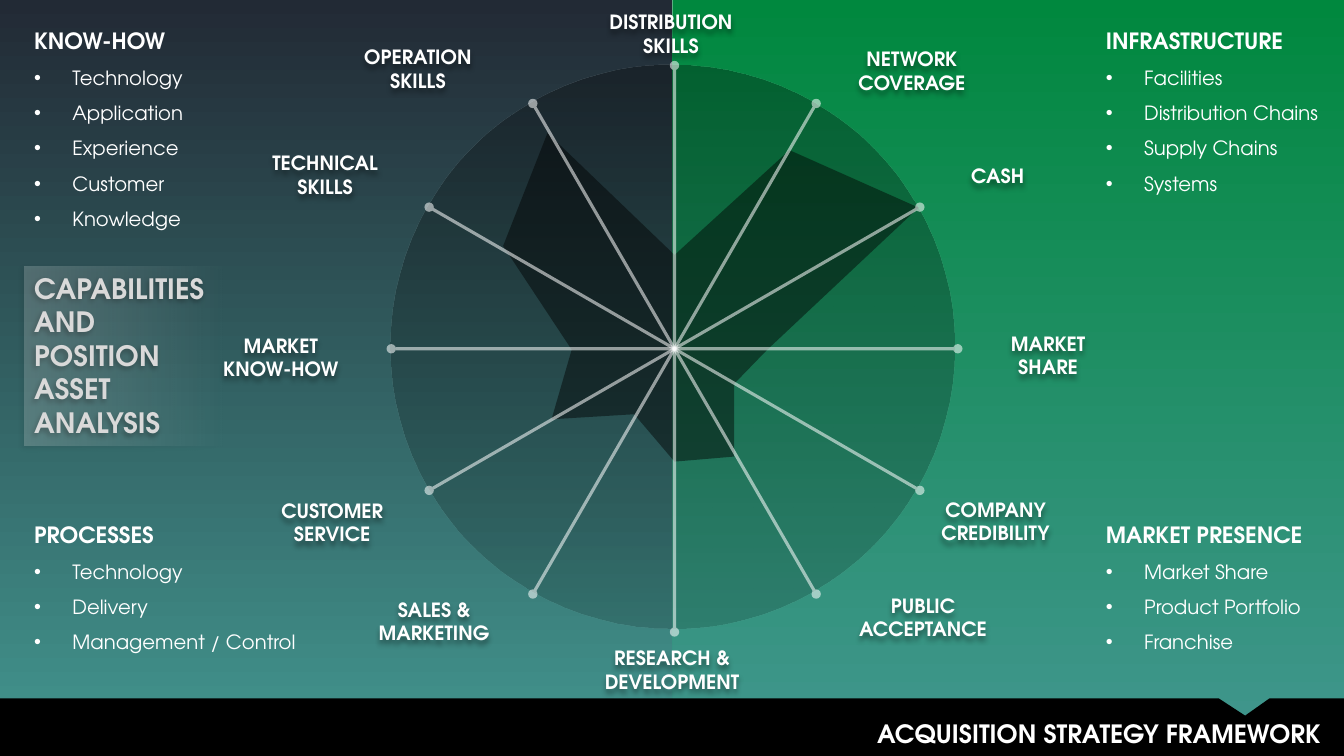
from dataclasses import dataclass
from math import cos, radians, sin

from lxml.etree import SubElement
from pptx import Presentation
from pptx.dml.color import RGBColor
from pptx.enum.shapes import MSO_CONNECTOR, MSO_SHAPE
from pptx.enum.text import MSO_ANCHOR, MSO_AUTO_SIZE, PP_ALIGN
from pptx.oxml.ns import qn
from pptx.util import Inches, Pt

FONT = "TeX Gyre Adventor"
WHITE = "FFFFFF"
BLACK = "000000"
CENTRE_X, CENTRE_Y, RADIUS = 6.69, 3.46, 2.81
LABEL_WIDTH = 2.01
BULLET_INDENT = 0.38


@dataclass
class Stop:
    colour: str
    opacity: int = 100


@dataclass
class Panel:
    preset: MSO_SHAPE
    place: tuple[float, float, float, float]
    start: Stop
    end: Stop
    angle: int = 270


@dataclass
class Outline:
    points: list[tuple[float, float]]
    opacity: int


@dataclass
class Label:
    left: float
    top: float
    lines: list[str]


@dataclass
class Asset:
    place: tuple[float, float, float, float]
    heading: str
    items: list[str]


PANELS = [
    Panel(MSO_SHAPE.RECTANGLE, (0, 0, 6.67, 7.5), Stop("222A35"), Stop("42968F")),
    Panel(MSO_SHAPE.RECTANGLE, (6.67, 0, 6.67, 7.5), Stop("00883E"), Stop("42968F")),
    Panel(MSO_SHAPE.OVAL, (3.87, 0.64, 5.6, 5.6), Stop(BLACK, 30), Stop(BLACK, 15)),
]
HEADLINE_PANEL = Panel(
    MSO_SHAPE.RECTANGLE, (0.24, 2.64, 2.05, 1.78), Stop(WHITE, 20), Stop(WHITE, 0), 0
)
OUTLINES = [
    Outline([(5.43, 1.32), (6.69, 2.53), (7.83, 1.49), (9.11, 2.06), (7.61, 3.47),
             (7.28, 3.81), (7.28, 4.53), (6.69, 4.58), (6.29, 4.11), (5.47, 4.16),
             (5.67, 3.47), (4.99, 2.44)], 45),
    Outline([(0, 6.93), (12.09, 6.93), (12.35, 7.1), (12.59, 6.93), (13.33, 6.93),
             (13.33, 7.5), (0, 7.5)], 100),
]
ASSETS = [
    Asset((0.24, 0.22, 2.01, 2.09), "KNOW-HOW",
          ["Technology", "Application", "Experience", "Customer", "Knowledge"]),
    Asset((10.87, 0.22, 2.4, 1.74), "INFRASTRUCTURE",
          ["Facilities", "Distribution Chains", "Supply Chains", "Systems"]),
    Asset((10.87, 5.12, 2.4, 1.39), "MARKET PRESENCE",
          ["Market Share", "Product Portfolio", "Franchise"]),
    Asset((0.24, 5.12, 3.02, 1.39), "PROCESSES",
          ["Technology", "Delivery", "Management / Control"]),
]
LABELS = [
    Label(5.65, 0.05, ["DISTRIBUTION", "SKILLS"]),
    Label(8.04, 0.42, ["NETWORK COVERAGE"]),
    Label(8.89, 1.58, ["CASH"]),
    Label(9.39, 3.24, ["MARKET", "SHARE"]),
    Label(8.87, 4.89, ["COMPANY CREDIBILITY"]),
    Label(8.15, 5.84, ["PUBLIC ACCEPTANCE"]),
    Label(5.66, 6.36, ["RESEARCH & DEVELOPMENT"]),
    Label(3.3, 5.88, ["SALES & MARKETING"]),
    Label(2.29, 4.9, ["CUSTOMER SERVICE"]),
    Label(1.78, 3.26, ["MARKET", "KNOW-HOW"]),
    Label(2.22, 1.45, ["TECHNICAL", "SKILLS"]),
    Label(3.14, 0.4, ["OPERATION", "SKILLS"]),
]


def colour(value: str) -> RGBColor:
    return RGBColor.from_string(value)


def set_opacity(element, percent: int) -> None:
    SubElement(element, qn("a:alpha"), val=str(percent * 1000))


def add_shadow(shape, distance: int, direction: int) -> None:
    shape.shadow.inherit = False
    effects = shape._element.spPr.find(qn("a:effectLst"))
    shadow = SubElement(effects, qn("a:outerShdw"), blurRad=str(Pt(4)),
                        dist=str(Pt(distance)), dir=str(direction * 60000), rotWithShape="0")
    set_opacity(SubElement(shadow, qn("a:srgbClr"), val=BLACK), 40)


def prepare_frame(frame) -> None:
    settings = {"word_wrap": True, "auto_size": MSO_AUTO_SIZE.SHAPE_TO_FIT_TEXT,
                "vertical_anchor": MSO_ANCHOR.TOP}
    for name, value in settings.items():
        setattr(frame, name, value)


def write(para, words: str, size: int, align=PP_ALIGN.LEFT,
          bold: bool = True, ink: str = WHITE) -> None:
    para.alignment = align
    span = para.add_run()
    span.text = words
    for name, value in {"name": FONT, "size": Pt(size), "bold": bold}.items():
        setattr(span.font, name, value)
    span.font.color.rgb = colour(ink)


def add_panel(page, panel: Panel):
    shape = page.shapes.add_shape(panel.preset, *map(Inches, panel.place))
    shape.shadow.inherit = False
    shape.line.fill.background()
    shape.fill.gradient()
    shape.fill.gradient_angle = panel.angle
    pairs = zip(shape.fill.gradient_stops, (panel.start, panel.end), (0, 1))
    for mark, stop, position in pairs:
        mark.position = position
        mark.color.rgb = colour(stop.colour)
    tints = shape._element.spPr.findall(".//" + qn("a:srgbClr"))
    for tint, stop in zip(tints, (panel.start, panel.end)):
        set_opacity(tint, stop.opacity)
    return shape


def add_outline(page, outline: Outline) -> None:
    points = [(Inches(x), Inches(y)) for x, y in outline.points]
    builder = page.shapes.build_freeform(*points[0])
    builder.add_line_segments(points[1:], close=True)
    shape = builder.convert_to_shape()
    shape.shadow.inherit = False
    shape.line.fill.background()
    shape.fill.solid()
    shape.fill.fore_color.rgb = colour(BLACK)
    set_opacity(shape._element.spPr.find(".//" + qn("a:srgbClr")), outline.opacity)


def add_spoke(page, degrees: int) -> None:
    across, down = RADIUS * cos(radians(degrees)), RADIUS * sin(radians(degrees))
    ends = (CENTRE_X - across, CENTRE_Y - down, CENTRE_X + across, CENTRE_Y + down)
    spoke = page.shapes.add_connector(MSO_CONNECTOR.STRAIGHT, *map(Inches, ends))
    spoke.line.width = Pt(2.25)
    spoke.line.color.rgb = colour(WHITE)
    properties = spoke._element.spPr
    set_opacity(properties.find(".//" + qn("a:srgbClr")), 55)
    for end in ("a:headEnd", "a:tailEnd"):
        SubElement(properties.find(qn("a:ln")), qn(end), type="oval")
    SubElement(properties, qn("a:effectLst"))


def add_label(page, label: Label) -> None:
    height = 0.34 if label.lines == ["CASH"] else 0.57
    box = page.shapes.add_textbox(
        *map(Inches, (label.left, label.top, LABEL_WIDTH, height)))
    prepare_frame(box.text_frame)
    add_shadow(box, 3, 90)
    for index, line in enumerate(label.lines):
        frame = box.text_frame
        para = frame.add_paragraph() if index else frame.paragraphs[0]
        write(para, line, 14, PP_ALIGN.CENTER)


def add_asset(page, asset: Asset) -> None:
    box = page.shapes.add_textbox(*map(Inches, asset.place))
    prepare_frame(box.text_frame)
    write(box.text_frame.paragraphs[0], asset.heading, 16)
    for item in asset.items:
        para = box.text_frame.add_paragraph()
        para.line_spacing = 1.5
        write(para, item, 14, bold=False)
        properties = para._p.get_or_add_pPr()
        properties.set("marL", str(Inches(BULLET_INDENT)))
        properties.set("indent", str(-Inches(BULLET_INDENT)))
        SubElement(properties, qn("a:buFont"), typeface="Arial")
        SubElement(properties, qn("a:buChar"), char="•")


def add_title(page) -> None:
    title = page.shapes.title
    page.shapes._spTree.append(title._element)
    places = zip(("left", "top", "width", "height"), (4.14, 7.08, 9.06, 0.4))
    for name, value in places:
        setattr(title, name, Inches(value))
    prepare_frame(title.text_frame)
    write(title.text_frame.paragraphs[0], "ACQUISITION STRATEGY FRAMEWORK", 18, PP_ALIGN.RIGHT)


def main() -> None:
    deck = Presentation()
    deck.slide_width, deck.slide_height = Inches(13.33), Inches(7.5)
    page = deck.slides.add_slide(deck.slide_layouts[5])
    for panel in PANELS:
        add_panel(page, panel)
    for outline in OUTLINES:
        add_outline(page, outline)
    add_title(page)
    headline = add_panel(page, HEADLINE_PANEL)
    add_shadow(headline, 2, 135)
    prepare_frame(headline.text_frame)
    write(headline.text_frame.paragraphs[0], "CAPABILITIES AND POSITION ASSET ANALYSIS",
          20, ink="D9D9D9")
    for asset in ASSETS:
        add_asset(page, asset)
    for degrees in range(0, 180, 30):
        add_spoke(page, degrees)
    for label in LABELS:
        add_label(page, label)
    deck.save("out.pptx")


if __name__ == "__main__":
    main()
